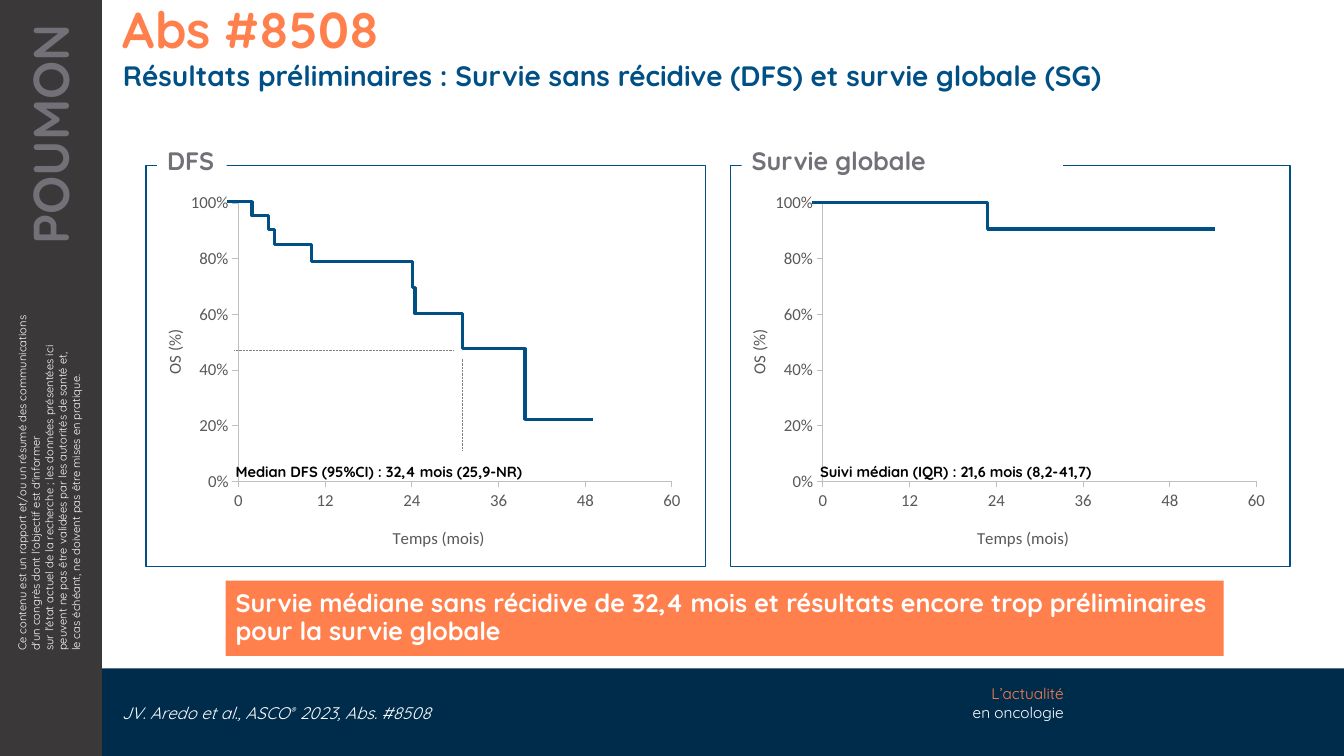
from dataclasses import dataclass

from lxml import etree
from pptx import Presentation
from pptx.chart.data import XyChartData
from pptx.dml.color import RGBColor
from pptx.enum.chart import XL_CHART_TYPE, XL_MARKER_STYLE, XL_TICK_MARK
from pptx.enum.dml import MSO_LINE
from pptx.enum.shapes import MSO_CONNECTOR, MSO_SHAPE
from pptx.enum.text import MSO_ANCHOR, PP_ALIGN
from pptx.oxml.ns import qn
from pptx.util import Cm, Pt

RECTANGLE = MSO_SHAPE.RECTANGLE
LEFT, RIGHT = PP_ALIGN.LEFT, PP_ALIGN.RIGHT
TOP, MIDDLE = MSO_ANCHOR.TOP, MSO_ANCHOR.MIDDLE
NAVY, BLUE, ORANGE, CHARCOAL = "002C4C", "005086", "FF7F4D", "3A3839"
GREY, WHITE, BLACK = "737078", "FFFFFF", "000000"
AXIS_TEXT, AXIS_LINE, DOTTED = "595959", "BFBFBF", "808080"
PANEL_STEP = 14.73


@dataclass
class Label:
    """A block of text; all lengths are in centimetres."""
    text: str
    left: float
    top: float
    width: float
    height: float
    size: float
    color: str
    bold: bool = False
    italic: bool = False
    align: PP_ALIGN = LEFT
    anchor: MSO_ANCHOR = TOP
    spacing: float = 1.0
    inset_left: float = 0.25
    inset_right: float = 0.25
    rotation: int = 0
    fill: str = ""


@dataclass
class Panel:
    """A framed survival plot; each step is (right end, height) of a plateau."""
    title: str
    title_width: float
    note: str
    curve_start: float
    steps: list[tuple[float, float]]


PANELS = [
    Panel("DFS", 1.75, "Median DFS (95%CI) : 32,4 mois (25,9-NR)", 5.72,
          [(6.35, 5.08), (6.76, 5.44), (6.91, 5.79), (7.85, 6.17), (10.39, 6.58),
           (10.46, 7.25), (11.66, 7.9), (13.23, 8.79), (14.94, 10.57)]),
    Panel("Survie globale", 8.1, "Suivi médian (IQR) : 21,6 mois (8,2-41,7)", 20.47,
          [(24.89, 5.11), (30.61, 5.77)]),
]
DISCLAIMER = Label(
    "Ce contenu est un rapport et/ou un résumé des communications d'un congrès "
    "dont l'objectif est d'informer\vsur l'état actuel de la recherche ; les données "
    "présentées ici peuvent ne pas être validées par les autorités de santé et,\v"
    "le cas échéant, ne doivent pas être mises en pratique.",
    -3.33, 11.1, 9.14, 1.96, 8, WHITE, rotation=270)
SIGNATURE = Label("L’actualité\ven oncologie", 22.89, 17.12, 4.17, 1.19, 11, ORANGE, align=RIGHT)
TOPIC = Label("POUMON", -2.64, 3.0, 7.8, 1.8, 36, GREY, bold=True, align=RIGHT,
              inset_right=0.61, rotation=270)
CITATION = Label("JV. Aredo et al., ASCO", 2.82, 17.63, 14.33, 0.69, 12, WHITE,
                 italic=True, spacing=0.9)
HEADINGS = [
    Label("Abs #8508", 2.59, 0, 31.27, 1.45, 36, ORANGE, bold=True, spacing=0.9,
          inset_left=0.51),
    Label("Résultats préliminaires : Survie sans récidive (DFS) et survie globale (SG)",
          2.59, 1.45, 31.27, 0.94, 20, BLUE, bold=True, spacing=0.9, inset_left=0.51),
]
CONCLUSION = Label(
    "Survie médiane sans récidive de 32,4 mois et résultats encore trop préliminaires "
    "pour la survie globale", 5.69, 14.63, 25.15, 1.9, 18, WHITE, bold=True,
    anchor=MIDDLE, spacing=0.9, fill=ORANGE)
MEDIAN_GUIDES = [(11.66, 11.35, 11.66, 9.04), (11.43, 8.84, 5.89, 8.84)]


def rgb(color: str) -> RGBColor:
    return RGBColor.from_string(color)


def add_rectangle(page, left: float, top: float, width: float, height: float,
                  fill: str = "", line: str = ""):
    shape = page.shapes.add_shape(RECTANGLE, Cm(left), Cm(top), Cm(width), Cm(height))
    shape.shadow.inherit = False
    if fill:
        shape.fill.solid()
        shape.fill.fore_color.rgb = rgb(fill)
    else:
        shape.fill.background()
    if line:
        shape.line.color.rgb = rgb(line)
        shape.line.width = Pt(1)
    else:
        shape.line.fill.background()
    return shape


def format_run(run, label: Label) -> None:
    font = run.font
    font.name, font.size = "Quicksand", Pt(label.size)
    font.bold, font.italic = label.bold, label.italic
    font.color.rgb = rgb(label.color)


def add_label(page, label: Label):
    """Draw the label and return its paragraph."""
    place = (label.left, label.top, label.width, label.height)
    if label.fill:
        box = add_rectangle(page, *place, fill=label.fill)
    else:
        box = page.shapes.add_textbox(*map(Cm, place))
    box.rotation = label.rotation
    frame = box.text_frame
    frame.word_wrap = True
    frame.vertical_anchor = label.anchor
    frame.margin_left, frame.margin_right = Cm(label.inset_left), Cm(label.inset_right)
    para = frame.paragraphs[0]
    para.text = label.text
    para.alignment = label.align
    para.line_spacing = label.spacing
    for run in para.runs:
        format_run(run, label)
    return para


def set_layout(parent, index: int, target: str = "", **fractions: float) -> None:
    """Place a chart part by fractions of the chart's size."""
    for old in parent.findall(qn("c:layout")):
        parent.remove(old)
    layout = etree.Element(qn("c:layout"))
    manual = etree.SubElement(layout, qn("c:manualLayout"))
    if target:
        etree.SubElement(manual, qn("c:layoutTarget")).set("val", target)
    for name in ("x", "y"):
        etree.SubElement(manual, qn(f"c:{name}Mode")).set("val", "edge")
    for name, value in fractions.items():
        etree.SubElement(manual, qn(f"c:{name}")).set("val", str(value))
    parent.insert(index, layout)


def style_axis(axis, title: str, maximum: float, unit: float, number_format: str,
               x: float, y: float) -> None:
    axis.minimum_scale, axis.maximum_scale, axis.major_unit = 0, maximum, unit
    axis.has_major_gridlines = False
    axis.major_tick_mark, axis.minor_tick_mark = XL_TICK_MARK.OUTSIDE, XL_TICK_MARK.NONE
    axis.format.line.color.rgb = rgb(AXIS_LINE)
    axis.format.line.width = Pt(0.75)
    axis.tick_labels.number_format = number_format
    axis.tick_labels.number_format_is_linked = False
    frame = axis.axis_title.text_frame
    frame.text = title
    for font in (axis.tick_labels.font, frame.paragraphs[0].runs[0].font):
        font.name, font.size, font.bold = "Calibri", Pt(12), False
        font.color.rgb = rgb(AXIS_TEXT)
    set_layout(axis.axis_title._element, 1, x=x, y=y)


def add_axes_chart(page, left: float) -> None:
    data = XyChartData()
    data.add_series("Series 1").add_data_point(0.7, 2.7)
    chart = page.shapes.add_chart(XL_CHART_TYPE.XY_SCATTER, Cm(left), Cm(4.7),
                                  Cm(14.1), Cm(9.55), data).chart
    chart.has_title = chart.has_legend = False
    chart.font.name, chart.font.size = "Calibri", Pt(12)
    chart.font.color.rgb = rgb(BLACK)
    plot = chart.plots[0]
    plot.vary_by_categories = False
    series = plot.series[0]
    series.format.line.fill.background()
    series.marker.style = XL_MARKER_STYLE.NONE
    style_axis(chart.category_axis, "Temps (mois)", 60, 12, "General", 0.46, 0.89)
    style_axis(chart.value_axis, "OS (%)", 1, 0.2, "0%", 0.05, 0.37)
    body = chart.value_axis.axis_title._element.find(".//" + qn("a:bodyPr"))
    body.set("rot", "-5400000")
    body.set("vert", "horz")
    set_layout(chart._chartSpace.chart.plotArea, 0, "inner", x=0.19, y=0.044, w=0.775, h=0.734)


def add_curve(page, panel: Panel) -> None:
    ends, heights = zip(*panel.steps)
    corners = []
    for end, height, following in zip(ends, heights, heights[1:] + heights[-1:]):
        corners.append((Cm(end), Cm(height)))
        if following != height:
            corners.append((Cm(end), Cm(following)))
    builder = page.shapes.build_freeform(Cm(panel.curve_start), Cm(heights[0]))
    builder.add_line_segments(corners, close=False)
    curve = builder.convert_to_shape()
    curve.shadow.inherit = False
    curve.fill.background()
    curve.line.color.rgb = rgb(BLUE)
    curve.line.width = Pt(2.25)


def add_guide(page, ends: tuple[float, float, float, float]) -> None:
    guide = page.shapes.add_connector(MSO_CONNECTOR.STRAIGHT, *map(Cm, ends))
    guide.line.color.rgb = rgb(DOTTED)
    guide.line.width = Pt(0.5)
    guide.line.dash_style = MSO_LINE.ROUND_DOT
    etree.SubElement(guide._element.spPr, qn("a:effectLst"))


def main() -> None:
    deck = Presentation()
    deck.slide_width, deck.slide_height = Cm(33.87), Cm(19.05)
    page = deck.slides.add_slide(deck.slide_layouts[6])
    add_rectangle(page, 2.57, 16.84, 31.3, 2.21, fill=NAVY)
    add_rectangle(page, 0, 0, 2.57, 19.05, fill=CHARCOAL)
    for label in (DISCLAIMER, TOPIC, *HEADINGS):
        add_label(page, label)
    signature = add_label(page, SIGNATURE)
    signature.runs[1].font.color.rgb = rgb(WHITE)
    citation = add_label(page, CITATION)
    for text, baseline in (("®", "30000"), (" 2023, Abs. #8508", "0")):
        run = citation.add_run()
        run.text = text
        format_run(run, CITATION)
        run._r.get_or_add_rPr().set("baseline", baseline)
    for index, panel in enumerate(PANELS):
        shift = index * PANEL_STEP
        add_rectangle(page, 3.68 + shift, 4.17, 14.1, 10.11, line=BLUE)
        add_axes_chart(page, 3.33 + shift)
        add_label(page, Label(panel.title, 3.96 + shift, 3.63, panel.title_width, 1.07, 18,
                              GREY, bold=True, spacing=0.9, fill=WHITE))
        add_label(page, Label(panel.note, 5.69 + shift, 11.53, 10.57, 0.71, 10.5, BLACK, bold=True))
        add_curve(page, panel)
    for ends in MEDIAN_GUIDES:
        add_guide(page, ends)
    add_label(page, CONCLUSION)
    deck.save("out.pptx")


if __name__ == "__main__":
    main()
